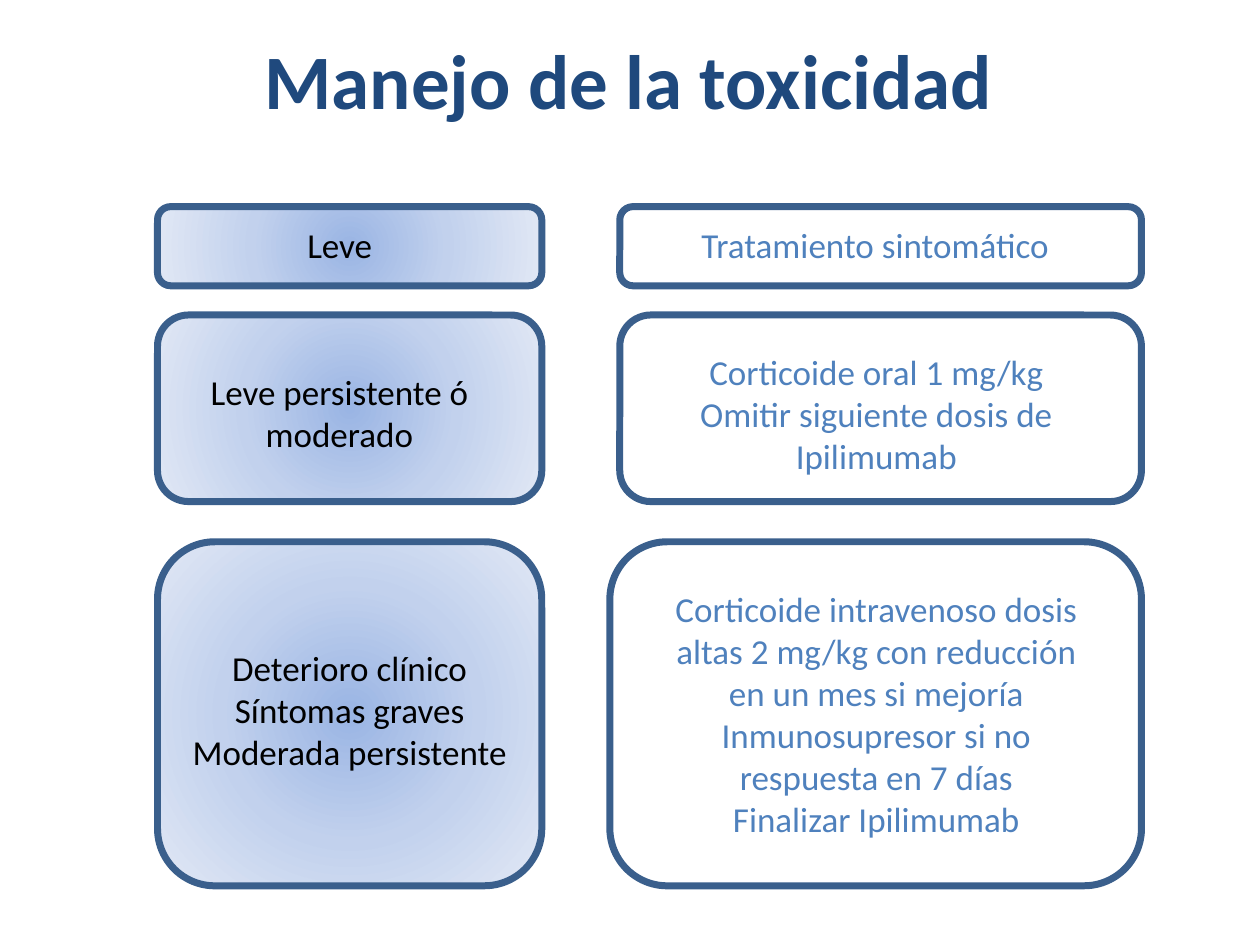
from lxml import etree
from pptx import Presentation
from pptx.dml.color import RGBColor
from pptx.enum.shapes import MSO_SHAPE as Shape
from pptx.enum.text import MSO_ANCHOR as Anchor, PP_ALIGN as Align
from pptx.oxml import parse_xml
from pptx.util import Pt

NAVY = RGBColor(0x1F, 0x49, 0x7D)
EDGE = RGBColor(0x3A, 0x5F, 0x8C)
BLUE = RGBColor(0x4F, 0x81, 0xBD)
BLACK = RGBColor(0, 0, 0)
GLOW = [(0, RGBColor(0x9A, 0xB5, 0xE4)),
        (50, RGBColor(0xC2, 0xD1, 0xED)),
        (100, RGBColor(0xE1, 0xE8, 0xF5))]
NS = "http://schemas.openxmlformats.org/drawingml/2006/main"

# Column boxes: left, width
LEFT = (90, 219.6)
WIDE = (354.2, 298.1)
LAST = (348.5, 303.8)

# Rows: top, height, then (column, text box within the card, lines) per side
ROWS = [
    (118.1, 45.2,
     (LEFT, (78.5, 5.8, 62, 31.5), ["Leve"]),
     (WIDE, (39.6, 5.8, 247.7, 31.5), ["Tratamiento sintomático"])),
    (180, 106.6,
     (LEFT, (0, 28, 208, 55.5), ["Leve persistente ó moderado"]),
     (WIDE, (17.3, 16.6, 258.5, 80),
      ["Corticoide oral 1 mg/kg", "Omitir siguiente dosis de Ipilimumab"])),
    (309.6, 196.6,
     (LEFT, (5.8, 56.2, 208, 80),
      ["Deterioro clínico", "Síntomas graves", "Moderada persistente"]),
     (LAST, (23, 22.3, 258.5, 152.6),
      ["Corticoide intravenoso dosis altas 2 mg/kg con reducción "
       "en un mes si mejoría",
       "Inmunosupresor si no respuesta en 7 días",
       "Finalizar Ipilimumab"])),
]


def add_text(slide, box, lines, size, color, bold=False,
             align=Align.CENTER, anchor=Anchor.TOP):
    frame = slide.shapes.add_textbox(*map(Pt, box)).text_frame
    frame.word_wrap = True
    frame.vertical_anchor = anchor
    frame.text = "\n".join(lines)
    for para in frame.paragraphs:
        para.alignment = align
        font = para.font
        font.name, font.size, font.bold = "Calibri", Pt(size), bold
        font.color.rgb = color


def add_glow(shape):
    """Fill the shape with a gradient that spreads from its centre."""
    stops = "".join(
        f'<a:gs pos="{pos * 1000}"><a:srgbClr val="{color}"/></a:gs>'
        for pos, color in GLOW)
    grad = parse_xml(
        f'<a:gradFill xmlns:a="{NS}" rotWithShape="1"><a:gsLst>{stops}</a:gsLst>'
        '<a:path path="circle"><a:fillToRect l="50000" t="50000" '
        'r="50000" b="50000"/></a:path></a:gradFill>')
    shape.fill.background()
    props = shape.element.spPr
    props.replace(props.find(etree.QName(NS, "noFill")), grad)


def add_card(slide, box, inset, lines, color, glow):
    card = slide.shapes.add_shape(Shape.ROUNDED_RECTANGLE, *map(Pt, box))
    card.shadow.inherit = False
    if glow:
        add_glow(card)
    else:
        card.fill.background()
    card.line.color.rgb = EDGE
    card.line.width = Pt(4)
    dx, dy, width, height = inset
    # The one-line labels start at the left of their text box
    align = Align.LEFT if height < 40 else Align.CENTER
    add_text(slide, (box[0] + dx, box[1] + dy, width, height),
             lines, 20, color, align=align)


def add_row(slide, top, height, grade, care):
    for (column, inset, lines), color, glow in (
            (grade, BLACK, True), (care, BLUE, False)):
        left, width = column
        add_card(slide, (left, top, width, height), inset, lines, color, glow)


def main():
    deck = Presentation()
    deck.slide_width, deck.slide_height = Pt(720), Pt(540)
    slide = deck.slides.add_slide(deck.slide_layouts[6])

    # Title
    add_text(slide, (56.2, 0, 606.2, 90), ["Manejo de la toxicidad"],
             44, NAVY, bold=True, anchor=Anchor.MIDDLE)

    # Severity on the left, treatment on the right
    for row in ROWS:
        add_row(slide, *row)

    deck.save("out.pptx")


if __name__ == "__main__":
    main()
